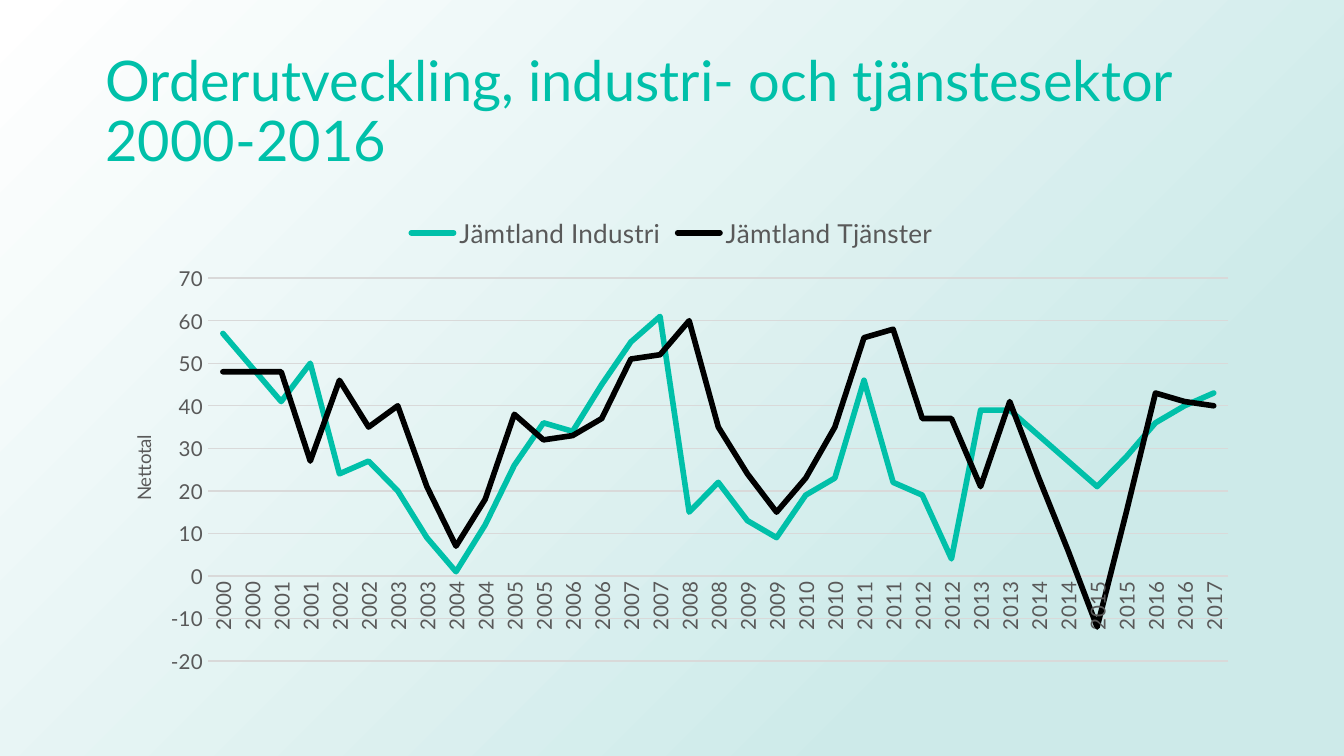
from lxml.etree import SubElement
from pptx import Presentation
from pptx.chart.data import CategoryChartData
from pptx.dml.color import RGBColor
from pptx.enum.chart import XL_CHART_TYPE, XL_LEGEND_POSITION, XL_TICK_MARK
from pptx.enum.shapes import MSO_SHAPE
from pptx.enum.text import MSO_ANCHOR
from pptx.oxml import parse_xml
from pptx.oxml.ns import nsdecls, qn
from pptx.util import Pt

TITLE = "Orderutveckling, industri- och tjänstesektor 2000-2016"
AXIS_TITLE = "Nettotal"
FONT = "Lato"
COLORS = {"teal": "00C0A9", "black": "000000", "gray": "595959",
          "grid": "D9D9D9", "mint": "CDEAE9", "white": "FFFFFF"}
YEARS = [str(2000 + half // 2) for half in range(35)]
SERIES = [
    ("Jämtland Industri", "teal",
     [57, 49, 41, 50, 24, 27, 20, 9, 1, 12, 26, 36, 34, 45, 55, 61, 15, 22,
      13, 9, 19, 23, 46, 22, 19, 4, 39, 39, 33, 27, 21, 28, 36, 40, 43]),
    ("Jämtland Tjänster", "black",
     [48, 48, 48, 27, 46, 35, 40, 21, 7, 18, 38, 32, 33, 37, 51, 52, 60, 35,
      24, 15, 23, 35, 56, 58, 37, 37, 21, 41, 23, 6, -12, 15, 43, 41, 40]),
]
WIDTH, HEIGHT = 720, 405
LEFT, CONTENT_WIDTH = 49.5, 621
PLOT_LAYOUT = {"layoutTarget": "inner", "xMode": "edge", "yMode": "edge",
               "x": 0.1, "y": 0.16, "w": 0.88, "h": 0.8}
AXIS_TITLE_LAYOUT = {"xMode": "edge", "yMode": "edge", "x": 0.03, "y": 0.48}


def rgb(name):
    return RGBColor.from_string(COLORS[name])


def style_font(font, size, color):
    font.name = FONT
    font.size = Pt(size)
    font.bold = False
    font.color.rgb = rgb(color)


def style_line(line, color, width):
    line.color.rgb = rgb(color)
    line.width = Pt(width)


def set_layout(layout, settings):
    for child in list(layout):
        layout.remove(child)
    manual = SubElement(layout, qn("c:manualLayout"))
    for tag, value in settings.items():
        SubElement(manual, qn(f"c:{tag}")).set("val", str(value))


def add_background(page):
    panel = page.shapes.add_shape(MSO_SHAPE.RECTANGLE, 0, 0, Pt(WIDTH), Pt(HEIGHT))
    panel.shadow.inherit = False
    panel.line.fill.background()
    panel.fill.gradient()
    gradient = panel.fill._xPr.find(qn("a:gradFill"))
    panel.fill._xPr.replace(gradient, parse_xml(
        f'<a:gradFill {nsdecls("a")} rotWithShape="1"><a:gsLst>'
        f'<a:gs pos="23000"><a:srgbClr val="{COLORS["mint"]}"/></a:gs>'
        f'<a:gs pos="100000"><a:srgbClr val="{COLORS["white"]}"/></a:gs></a:gsLst>'
        '<a:path path="circle"><a:fillToRect l="100000" t="100000"/></a:path>'
        '</a:gradFill>'))


def add_title(page):
    box = page.shapes.add_textbox(Pt(LEFT), Pt(21.6), Pt(CONTENT_WIDTH), Pt(78.5))
    frame = box.text_frame
    frame.word_wrap = True
    frame.vertical_anchor = MSO_ANCHOR.MIDDLE
    frame.text = TITLE
    paragraph = frame.paragraphs[0]
    paragraph.line_spacing = 0.9
    style_font(paragraph.runs[0].font, 30, "teal")


def add_order_chart(page):
    data = CategoryChartData(number_format="0")
    data.categories = YEARS
    for name, _, values in SERIES:
        data.add_series(name, values)
    chart = page.shapes.add_chart(XL_CHART_TYPE.LINE, Pt(LEFT), Pt(108),
                                  Pt(CONTENT_WIDTH), Pt(256.5), data).chart
    chart.has_title = False
    chart.has_legend = True
    chart.legend.position = XL_LEGEND_POSITION.TOP
    chart.legend.include_in_layout = False
    style_font(chart.legend.font, 14, "gray")

    plot = chart.plots[0]
    plot.vary_by_categories = False
    for series, (_, color, _) in zip(plot.series, SERIES):
        series.smooth = False
        style_line(series.format.line, color, 3)
        series.format.line._ln.set("cap", "rnd")

    years, values = chart.category_axis, chart.value_axis
    for axis in (years, values):
        axis.major_tick_mark = axis.minor_tick_mark = XL_TICK_MARK.NONE
        style_font(axis.tick_labels.font, 11, "gray")
    style_line(years.format.line, "grid", 0.75)
    body = years._element.find(qn("c:txPr")).find(qn("a:bodyPr"))
    body.set("rot", "-5400000")
    body.set("vert", "horz")

    values.minimum_scale, values.maximum_scale, values.major_unit = -20, 70, 10
    values.format.line.fill.background()
    style_line(values.major_gridlines.format.line, "grid", 0.75)
    values.tick_labels.number_format = "0"
    values.tick_labels.number_format_is_linked = False
    frame = values.axis_title.text_frame
    frame.text = AXIS_TITLE
    style_font(frame.paragraphs[0].runs[0].font, 10, "gray")
    body = frame._txBody.find(qn("a:bodyPr"))
    body.set("rot", "-5400000")
    body.set("vert", "horz")

    set_layout(values.axis_title._element.get_or_add_layout()
               if hasattr(values.axis_title._element, "get_or_add_layout")
               else values.axis_title._element.find(qn("c:layout")), AXIS_TITLE_LAYOUT)
    area = chart._chartSpace.chart.plotArea
    layout = area.find(qn("c:layout"))
    if layout is None:
        layout = parse_xml(f'<c:layout {nsdecls("c")}/>')
        area.insert(0, layout)
    set_layout(layout, PLOT_LAYOUT)


deck = Presentation()
deck.slide_width, deck.slide_height = Pt(WIDTH), Pt(HEIGHT)
page = deck.slides.add_slide(deck.slide_layouts[6])
add_background(page)
add_title(page)
add_order_chart(page)
deck.save("out.pptx")
